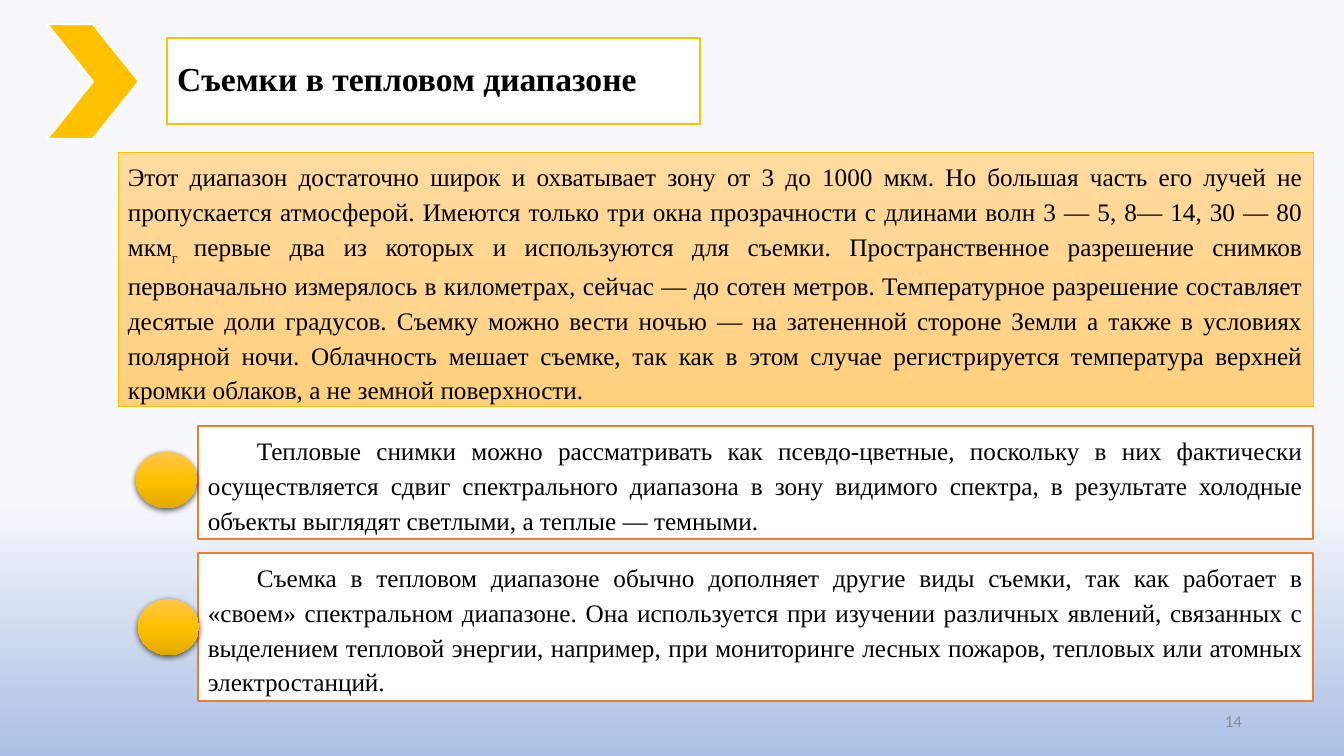
import pptx
import pptx.util
from pptx.dml.color import RGBColor
from pptx.enum.shapes import MSO_SHAPE
from pptx.enum.text import MSO_ANCHOR, MSO_AUTO_SIZE, PP_ALIGN
from pptx.oxml import parse_xml
from pptx.oxml.ns import nsdecls, qn

TITLE = "Съемки в тепловом диапазоне"
PAGE = "14"
INTRO = [
    ("Этот диапазон достаточно широк и охватывает зону от 3 до 1000 мкм. Но большая часть "
     "его лучей не пропускается атмосферой. Имеются только три окна прозрачности с длинами "
     "волн 3 — 5, 8— 14, 30 — 80 мкм", 0),
    ("г ", -25),
    ("первые два из которых и используются для съемки. Пространственное разрешение снимков "
     "первоначально измерялось в километрах, сейчас — до сотен метров. Температурное "
     "разрешение составляет десятые доли градусов. Съемку можно вести ночью — на затененной "
     "стороне Земли а также в условиях полярной ночи. Облачность мешает съемке, так как в "
     "этом случае регистрируется температура верхней кромки облаков, а не земной поверхности.", 0),
]
NOTES = [
    {"top": 426, "height": 113, "dot": (136, 452),
     "text": "Тепловые снимки можно рассматривать как псевдо-цветные, поскольку в них фактически "
             "осуществляется сдвиг спектрального диапазона в зону видимого спектра, в результате "
             "холодные объекты выглядят светлыми, а теплые — темными."},
    {"top": 553, "height": 148, "dot": (138, 599),
     "text": "Съемка в тепловом диапазоне обычно дополняет другие виды съемки, так как работает в "
             "«своем» спектральном диапазоне. Она используется при изучении различных явлений, "
             "связанных с выделением тепловой энергии, например, при мониторинге лесных пожаров, "
             "тепловых или атомных электростанций."},
]
COLORS = {"white": "FFFFFF", "black": "000000", "gold": "FFC000", "orange": "ED7D31",
          "gray": "8C8C8C"}
GRADIENTS = {
    "sky": [(0, "F6F8FC"), (66, "F6F8FC"), (100, "ABC0E4")],
    "peach": [(0, "FFDB9E"), (50, "FFD590"), (100, "FFD07C")],
    "dot": [(0, "FFC64B"), (50, "FFC000"), (100, "E3AB00")],
}
SERIF = "Times New Roman"
NOTE_LEFT, NOTE_WIDTH = 198, 1115
NOTE_INDENT = 49
DOT_SIZE = (61, 56)


def px(n):
    return round(n * 914400 / 100.8)


def rgb(name):
    return RGBColor.from_string(COLORS[name])


def gradient(fill, element, name):
    fill.gradient()
    fill.gradient_angle = 270
    stops = element.find(".//" + qn("a:gsLst"))
    for gs in list(stops):
        stops.remove(gs)
    for pos, color in GRADIENTS[name]:
        stops.append(parse_xml(
            f'<a:gs {nsdecls("a")} pos="{pos * 1000}"><a:srgbClr val="{color}"/></a:gs>'))


def style(sp, fill, line=None, weight=1):
    sp.shadow.inherit = False
    if fill in GRADIENTS:
        gradient(sp.fill, sp._element, fill)
    else:
        sp.fill.solid()
        sp.fill.fore_color.rgb = rgb(fill)
    if line:
        sp.line.color.rgb = rgb(line)
        sp.line.width = pptx.util.Pt(weight)
    else:
        sp.line.fill.background()


def place(sp, left, top, width, height):
    sp.left, sp.top, sp.width, sp.height = px(left), px(top), px(width), px(height)


def add(kind, left, top, width, height, fill, **outline):
    sp = s.shapes.add_shape(kind, px(left), px(top), px(width), px(height))
    style(sp, fill, **outline)
    return sp


def write(sp, runs, size=18, font=SERIF, color="black", bold=False, align=PP_ALIGN.JUSTIFY,
          anchor=MSO_ANCHOR.TOP, spacing=1.15, after=10, indent=0,
          fit=MSO_AUTO_SIZE.SHAPE_TO_FIT_TEXT):
    tf = sp.text_frame
    tf.word_wrap = True
    tf.auto_size = fit
    tf.vertical_anchor = anchor
    p = tf.paragraphs[0]
    p.alignment = align
    p.line_spacing = spacing
    p.space_after = pptx.util.Pt(after)
    if indent:
        p._p.get_or_add_pPr().set("indent", str(px(indent)))
    for text, baseline in runs:
        r = p.add_run()
        r.text = text
        r.font.size = pptx.util.Pt(size)
        r.font.name = font
        r.font.bold = bold
        r.font.color.rgb = rgb(color)
        if baseline:
            r._r.get_or_add_rPr().set("baseline", str(baseline * 1000))


def add_shadow(sp):
    sp._element.spPr.find(qn("a:effectLst")).append(parse_xml(
        f'<a:outerShdw {nsdecls("a")} blurRad="57150" dist="19050" dir="5400000" '
        'algn="ctr" rotWithShape="0"><a:srgbClr val="000000"><a:alpha val="63000"/>'
        '</a:srgbClr></a:outerShdw>'))


prs = pptx.Presentation()
prs.slide_width, prs.slide_height = px(1344), px(756)
s = prs.slides.add_slide(prs.slide_layouts[5])
gradient(s.background.fill, s._element, "sky")

title = s.shapes.title
place(title, 167, 38, 533, 86)
style(title, "white", "gold")
write(title, [(TITLE, 0)], size=24, bold=True, align=PP_ALIGN.LEFT, anchor=MSO_ANCHOR.MIDDLE,
      spacing=0.9, after=0, fit=MSO_AUTO_SIZE.NONE)

number = s.shapes.add_textbox(px(950), px(701), px(302), px(40))
write(number, [(PAGE, 0)], size=12, font="Calibri", color="gray", align=PP_ALIGN.RIGHT,
      anchor=MSO_ANCHOR.MIDDLE, spacing=1.0, after=0, fit=MSO_AUTO_SIZE.NONE)

add(MSO_SHAPE.CHEVRON, 47, 24, 92, 115, "gold", line="white", weight=1.5)

intro = add(MSO_SHAPE.RECTANGLE, 118, 152, 1195, 254, "peach", line="gold", weight=0.5)
write(intro, INTRO)

for note in NOTES:
    box = add(MSO_SHAPE.RECTANGLE, NOTE_LEFT, note["top"], NOTE_WIDTH, note["height"],
              "white", line="orange")
    write(box, [(note["text"], 0)], indent=NOTE_INDENT)

for note in NOTES:
    dot = add(MSO_SHAPE.FLOWCHART_CONNECTOR, *note["dot"], *DOT_SIZE, "dot")
    add_shadow(dot)

prs.save("out.pptx")
